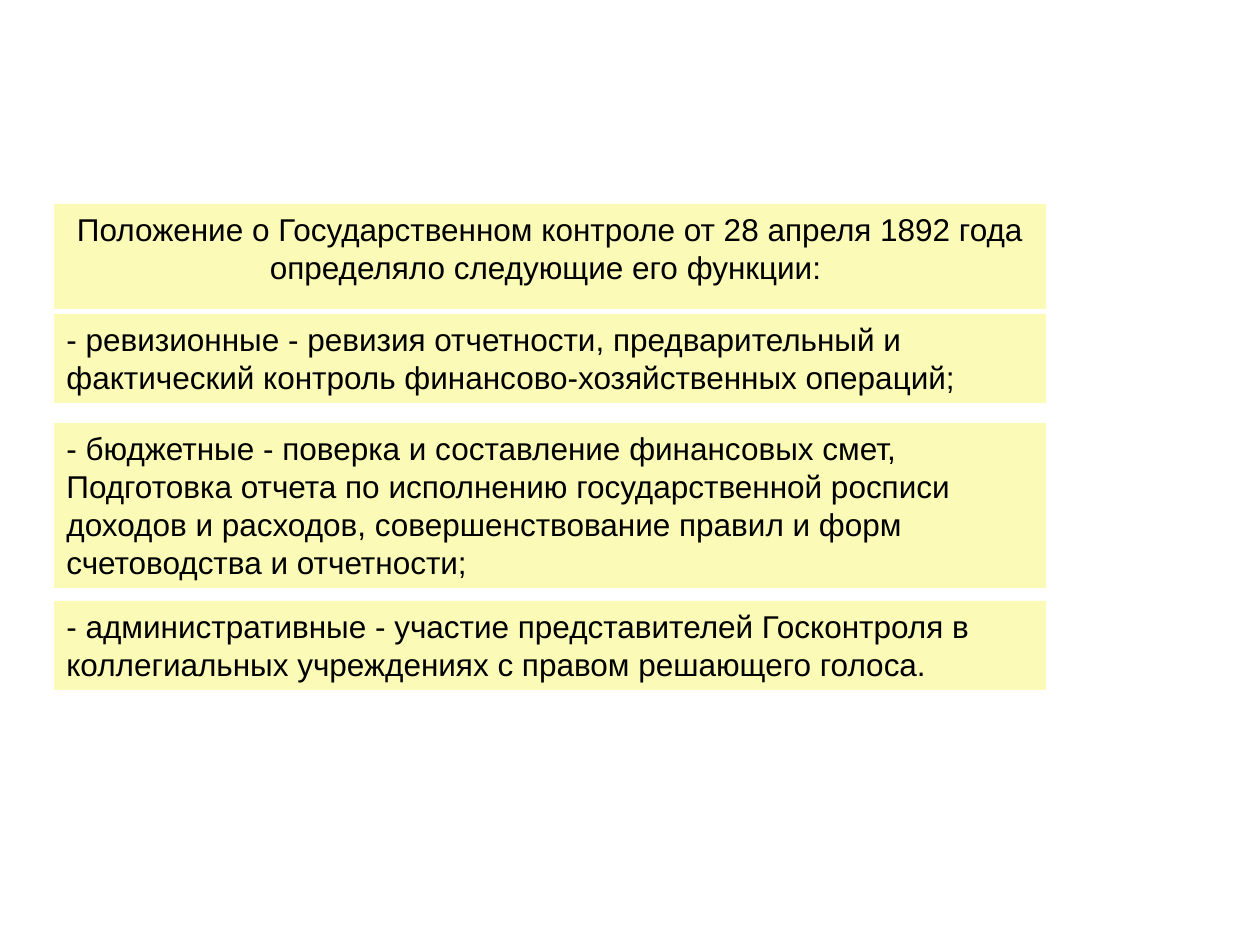
from pptx import Presentation, util as u
from pptx.dml.color import RGBColor
from pptx.enum import shapes, text

# Content: heading, then (text, top, height) of each function, in px
HEADING = ("Положение о Государственном контроле от 28 апреля 1892 года "
           "определяло следующие его функции: ", 204, 89)
FUNCTIONS = [
    ("- ревизионные - ревизия отчетности, предварительный и фактический "
     "контроль финансово-хозяйственных операций;", 314, 89),
    ("- бюджетные - поверка и составление финансовых смет, Подготовка отчета "
     "по исполнению государственной росписи доходов и расходов, "
     "совершенствование правил и форм счетоводства и отчетности;", 423, 165),
    ("- административные - участие представителей Госконтроля в "
     "коллегиальных учреждениях с правом решающего голоса.", 601, 89),
]
LEFT, WIDTH = 54, 992

THEME = {
    "panel": RGBColor.from_string("FBFBB7"),
    "ink": RGBColor.from_string("000000"),
    "font": "Arial",
    "size": u.Pt(18),
}


def px(length):
    return u.Emu(round(length * 914400 / 126))


def fill_panel(box, words, align):
    """Give a box its panel colour and one paragraph of text."""
    box.fill.solid()
    box.fill.fore_color.rgb = THEME["panel"]
    box.line.fill.background()
    frame = box.text_frame
    frame.word_wrap = True
    frame.auto_size = text.MSO_AUTO_SIZE.SHAPE_TO_FIT_TEXT
    frame.vertical_anchor = text.MSO_ANCHOR.TOP
    para = frame.paragraphs[0]
    para.alignment = align
    span = para.add_run()
    span.text = words
    span.font.name = THEME["font"]
    span.font.size = THEME["size"]
    span.font.color.rgb = THEME["ink"]


def main():
    deck = Presentation()
    deck.slide_width, deck.slide_height = px(1260), px(945)
    page = deck.slides.add_slide(deck.slide_layouts[5])

    # Heading
    words, top, height = HEADING
    title = page.shapes.title
    title.left, title.top = px(LEFT), px(top)
    title.width, title.height = px(WIDTH), px(height)
    fill_panel(title, words, text.PP_ALIGN.CENTER)

    # Functions
    for words, top, height in FUNCTIONS:
        box = page.shapes.add_shape(shapes.MSO_SHAPE.RECTANGLE, px(LEFT),
                                    px(top), px(WIDTH), px(height))
        box.shadow.inherit = False
        fill_panel(box, words, text.PP_ALIGN.LEFT)

    deck.save("out.pptx")


if __name__ == "__main__":
    main()
